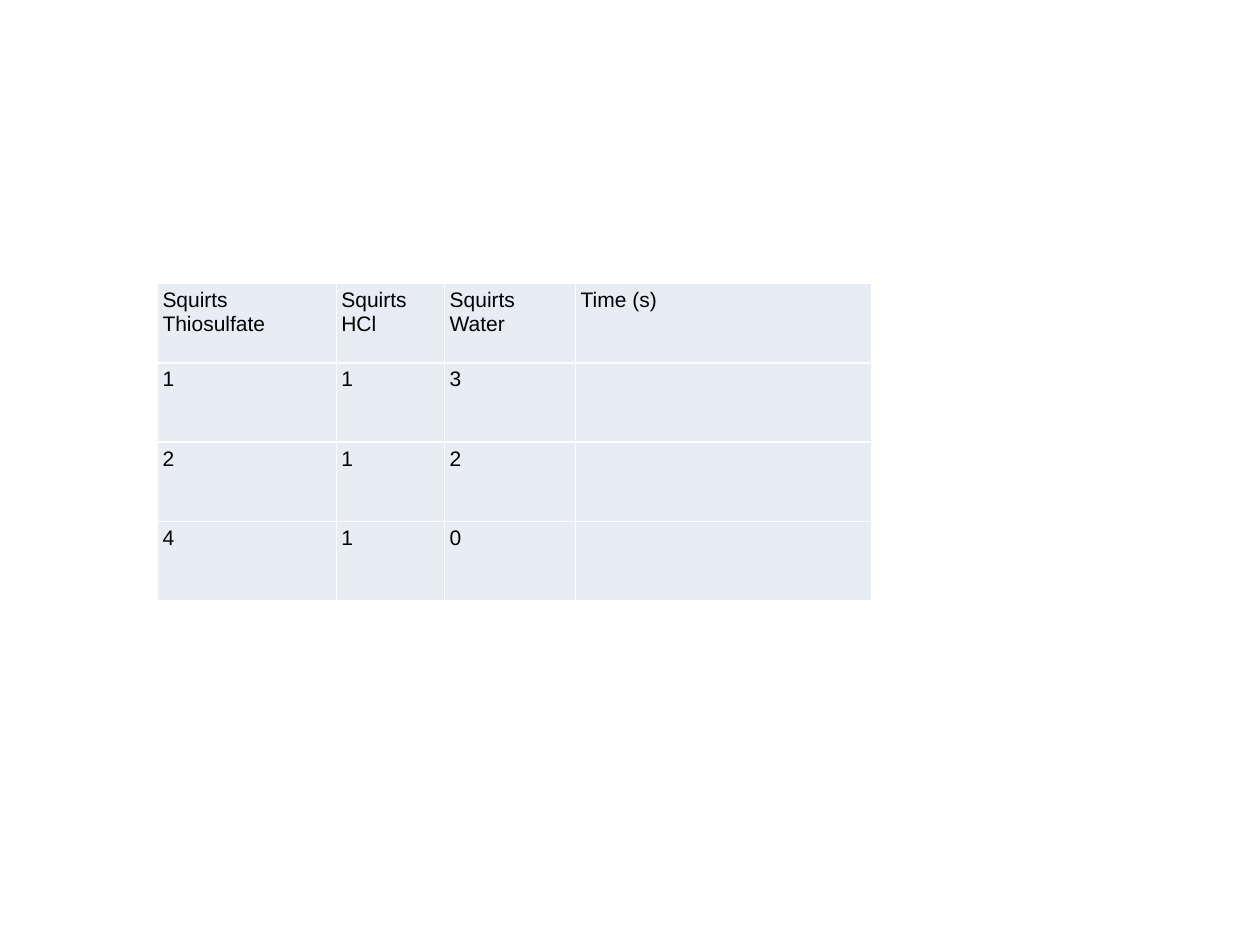
"""Build a slide with a results table for the thiosulfate and acid experiment."""
from dataclasses import dataclass

import lxml.etree
import pptx
import pptx.dml.color
import pptx.oxml.ns
import pptx.util

Inches = pptx.util.Inches
Pt = pptx.util.Pt
qn = pptx.oxml.ns.qn

COLORS = {"cell": "E8ECF4", "border": "FFFFFF", "text": "000000"}
FONT = "Arial"
MARGIN = 0.04
ROW_HEIGHT = 0.63


@dataclass(frozen=True)
class Column:
    """Describe one table column: header, width in inches and values."""
    header: str
    width: float
    values: tuple[str, ...]


COLUMNS = (
    Column("Squirts Thiosulfate", 1.42, ("1", "2", "4")),
    Column("Squirts HCl", 0.86, ("1", "1", "1")),
    Column("Squirts Water", 1.04, ("3", "2", "0")),
    Column("Time (s)", 2.35, ("", "", "")),
)


def rgb(name: str) -> pptx.dml.color.RGBColor:
    """Return a named colour."""
    return pptx.dml.color.RGBColor.from_string(COLORS[name])


def add_borders(cell) -> None:
    """Draw a thin line on all four sides of a cell."""
    tc_pr = cell._tc.get_or_add_tcPr()
    for side in ("lnL", "lnR", "lnT", "lnB"):
        ln = lxml.etree.SubElement(tc_pr, qn(f"a:{side}"), w=str(Pt(1)))
        fill = lxml.etree.SubElement(ln, qn("a:solidFill"))
        lxml.etree.SubElement(fill, qn("a:srgbClr"), val=COLORS["border"])


def fill_cell(cell, text: str) -> None:
    """Style a cell and write its text."""
    cell.margin_left = cell.margin_right = Inches(MARGIN)
    cell.margin_top = cell.margin_bottom = Inches(MARGIN)
    add_borders(cell)
    cell.fill.solid()
    cell.fill.fore_color.rgb = rgb("cell")
    if text:
        r = cell.text_frame.paragraphs[0].add_run()
        r.text = text
        r.font.name = FONT
        r.font.size = Pt(12)
        r.font.color.rgb = rgb("text")


def add_results_table(s, left: float, top: float) -> None:
    """Add the results table at a position in inches."""
    rows = 1 + len(COLUMNS[0].values)
    width = sum(column.width for column in COLUMNS)
    table = s.shapes.add_table(
        rows, len(COLUMNS), Inches(left), Inches(top),
        Inches(width), Inches(rows * ROW_HEIGHT)).table
    table.first_row = False
    table.horz_banding = False
    for row in table.rows:
        row.height = Inches(ROW_HEIGHT)
    for c, column in enumerate(COLUMNS):
        table.columns[c].width = Inches(column.width)
        for i, text in enumerate((column.header, *column.values)):
            fill_cell(table.cell(i, c), text)


def main() -> None:
    """Create and save the presentation."""
    prs = pptx.Presentation()
    prs.slide_width = Inches(10)
    prs.slide_height = Inches(7.5)
    s = prs.slides.add_slide(prs.slide_layouts[6])
    add_results_table(s, 1.25, 2.25)
    prs.save("out.pptx")


if __name__ == "__main__":
    main()
